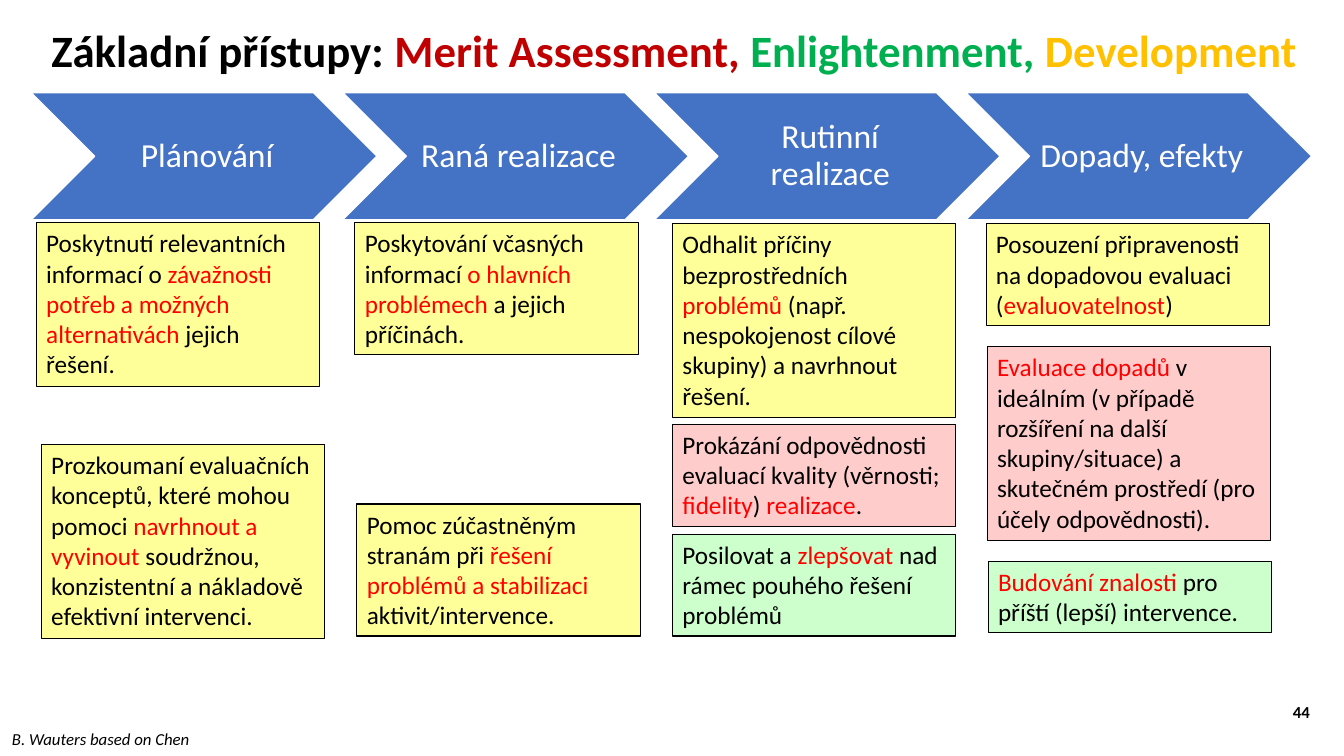
from pptx import Presentation
from pptx.dml.color import RGBColor
from pptx.enum.shapes import MSO_SHAPE
from pptx.enum.text import MSO_ANCHOR, MSO_AUTO_SIZE, PP_ALIGN
from pptx.util import Inches, Pt

CHEVRON, RECTANGLE = MSO_SHAPE.CHEVRON, MSO_SHAPE.RECTANGLE
TOP, MIDDLE = MSO_ANCHOR.TOP, MSO_ANCHOR.MIDDLE
LEFT, CENTER, RIGHT = PP_ALIGN.LEFT, PP_ALIGN.CENTER, PP_ALIGN.RIGHT
COLORS = {
    "black": "000000", "white": "FFFFFF", "blue": "4472C4", "red": "FF0000",
    "merit": "C00000", "enlightenment": "00B050", "development": "FFC000",
    "yellow": "FFFF99", "pink": "FFCCCC", "green": "CCFFCC",
}


def write(shape, runs, size, align=LEFT, anchor=TOP, spacing=1.0, bold=False, italic=False):
    """Fill a shape with one paragraph made of (text, color name) runs."""
    frame = shape.text_frame
    frame.word_wrap = True
    frame.auto_size = MSO_AUTO_SIZE.NONE
    frame.vertical_anchor = anchor
    paragraph = frame.paragraphs[0]
    paragraph.alignment = align
    paragraph.line_spacing = spacing
    for text, color in runs:
        run = paragraph.add_run()
        run.text = text
        font = run.font
        font.name, font.size = "Calibri", Pt(size)
        font.bold, font.italic = bold, italic
        font.color.rgb = RGBColor.from_string(COLORS[color])


def add_filled_shape(kind, left, top, width, height, fill, line, line_width):
    shape = slide.shapes.add_shape(kind, Inches(left), Inches(top), Inches(width), Inches(height))
    shape.shadow.inherit = False
    shape.fill.solid()
    shape.fill.fore_color.rgb = RGBColor.from_string(COLORS[fill])
    shape.line.color.rgb = RGBColor.from_string(COLORS[line])
    shape.line.width = Pt(line_width)
    return shape


presentation = Presentation()
presentation.slide_width = Inches(13.33)
presentation.slide_height = Inches(7.5)
slide = presentation.slides.add_slide(presentation.slide_layouts[5])

# Title
title = slide.shapes.title
title.left, title.top = Inches(0.41), Inches(0.25)
title.width, title.height = Inches(12.6), Inches(0.55)
title_runs = [
    ("Základní přístupy: ", "black"),
    ("Merit Assessment, ", "merit"),
    ("Enlightenment, ", "enlightenment"),
    ("Development", "development"),
]
write(title, title_runs, 32, anchor=MIDDLE, spacing=0.9, bold=True)

# Phases
phases = ["Plánování", "Raná realizace", "Rutinní realizace", "Dopady, efekty"]
for index, phase in enumerate(phases):
    chevron = add_filled_shape(CHEVRON, 0.31 + 3.09 * index, 0.92, 3.43, 1.26, "blue", "white", 1)
    write(chevron, [(phase, "white")], 24, CENTER, MIDDLE, 0.9)
    frame = chevron.text_frame
    frame.margin_left = Inches(0.1)
    frame.margin_right = frame.margin_top = frame.margin_bottom = Inches(0.04)

# Purposes under each phase: left, top, height, fill, text with *highlights*
purposes = [
    (0.36, 2.21, 1.62, "yellow",
     "Poskytnutí relevantních informací o *závažnosti potřeb a možných alternativách* jejich řešení."),
    (0.41, 4.41, 1.92, "yellow",
     "Prozkoumaní evaluačních konceptů, které mohou pomoci *navrhnout a vyvinout *"
     "soudržnou, konzistentní a nákladově efektivní intervenci."),
    (3.52, 2.21, 1.31, "yellow",
     "Poskytování včasných informací *o hlavních problémech *a jejich příčinách."),
    (3.54, 5.0, 1.31, "yellow",
     "Pomoc zúčastněným stranám při *řešení problémů a stabilizaci *aktivit/intervence."),
    (6.67, 2.22, 1.92, "yellow",
     "Odhalit příčiny bezprostředních *problémů* (např. nespokojenost cílové skupiny) "
     "a navrhnout řešení."),
    (6.67, 4.21, 1.01, "pink",
     "Prokázání odpovědnosti evaluací kvality (věrnosti; *fidelity*) *realizace*."),
    (6.67, 5.3, 1.01, "green",
     "Posilovat a *zlepšovat *nad rámec pouhého řešení problémů"),
    (9.78, 2.22, 1.01, "yellow",
     "Posouzení připravenosti na dopadovou evaluaci (*evaluovatelnost*)"),
    (9.79, 3.44, 1.92, "pink",
     "*Evaluace dopadů *v ideálním (v případě rozšíření na další skupiny/situace) "
     "a skutečném prostředí (pro účely odpovědnosti)."),
    (9.8, 5.57, 0.71, "green",
     "*Budování znalosti *pro příští (lepší) intervence."),
]
for left, top, height, fill, text in purposes:
    box = add_filled_shape(RECTANGLE, left, top, 2.81, height, fill, "black", 0.75)
    parts = enumerate(text.split("*"))
    write(box, [(part, "red" if index % 2 else "black") for index, part in parts if part], 18)

# Source and page number
source = slide.shapes.add_textbox(Inches(0.02), Inches(7.18), Inches(5.91), Inches(0.3))
write(source, [("B. Wauters based on Chen", "black")], 12, italic=True)
page_number = slide.shapes.add_textbox(Inches(12.49), Inches(6.86), Inches(0.6), Inches(0.4))
write(page_number, [("44", "black")], 12, RIGHT, MIDDLE, bold=True)

presentation.save("out.pptx")
